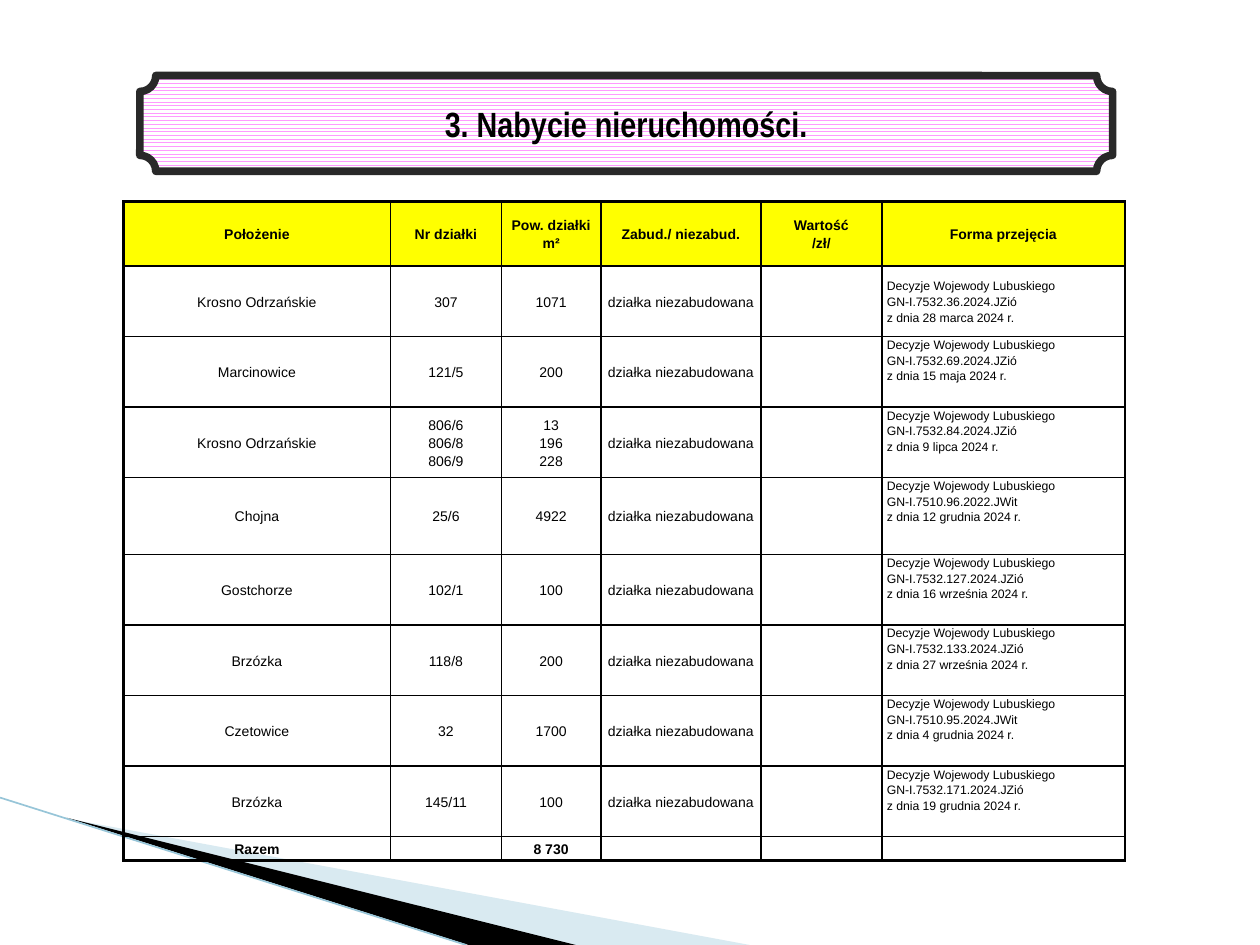
from lxml import etree
from pptx import Presentation
from pptx.dml.color import RGBColor
from pptx.enum.dml import MSO_PATTERN
from pptx.enum.shapes import MSO_CONNECTOR, MSO_SHAPE
from pptx.enum.text import MSO_ANCHOR, PP_ALIGN
from pptx.oxml.ns import qn
from pptx.util import Inches, Pt

PLAQUE, STRAIGHT = MSO_SHAPE.PLAQUE, MSO_CONNECTOR.STRAIGHT
ZIG_ZAG = MSO_PATTERN.ZIG_ZAG
LEFT, CENTER = PP_ALIGN.LEFT, PP_ALIGN.CENTER
TOP, MIDDLE = MSO_ANCHOR.TOP, MSO_ANCHOR.MIDDLE

# Content
TITLE = "3. Nabycie nieruchomości."
HEADERS = ["Położenie", "Nr działki", "Pow. działki m²", "Zabud./ niezabud.",
           "Wartość\n/zł/", "Forma przejęcia"]
BUILT = "działka niezabudowana"
ISSUER = "Decyzje Wojewody Lubuskiego"
PLOTS = [  # place, plot numbers, areas, case number, date
    ("Krosno Odrzańskie", "307", "1071", "GN-I.7532.36.2024.JZió", "28 marca 2024"),
    ("Marcinowice", "121/5", "200", "GN-I.7532.69.2024.JZió", "15 maja 2024"),
    ("Krosno Odrzańskie", "806/6\n806/8\n806/9", "13\n196\n228",
     "GN-I.7532.84.2024.JZió", "9 lipca 2024"),
    ("Chojna", "25/6", "4922", "GN-I.7510.96.2022.JWit", "12 grudnia 2024"),
    ("Gostchorze", "102/1", "100", "GN-I.7532.127.2024.JZió", "16 września 2024"),
    ("Brzózka", "118/8", "200", "GN-I.7532.133.2024.JZió", "27 września 2024"),
    ("Czetowice", "32", "1700", "GN-I.7510.95.2024.JWit", "4 grudnia 2024"),
    ("Brzózka", "145/11", "100", "GN-I.7532.171.2024.JZió", "19 grudnia 2024"),
]
TOTAL = ["Razem", "", "8 730", "", "", ""]

# Layout in inches
WIDTH, HEIGHT = 10, 7.5
COLUMNS = [2.12, 0.88, 0.79, 1.27, 0.96, 1.93]
HEADER_HEIGHT, PLOT_HEIGHT, TALL_HEIGHT, TOTAL_HEIGHT = 0.51, 0.56, 0.61, 0.19
TALL_PLACE = "Chojna"

THEME = {
    "black": "000000", "header": "FFFF00", "pattern": "FF99FF", "paper": "FFFFFF",
    "frame": "292929", "pale": "A0CBDC", "edge": "97C5D8",
    "font": "Arial", "title_font": "Arial Narrow",
    "title": 20, "body": 8, "small": 7,
    "inner": 1, "outer": 1.5, "bottom": 2.25,
}
SWOOSH = [  # points, colour, opacity in percent
    ([(0.55, 6.5), (5.95, HEIGHT), (4.56, HEIGHT)], "pale", 40),
    ([(0.53, 6.49), (4.57, HEIGHT), (3.72, HEIGHT)], "black", 100),
]


def color(name):
    return RGBColor.from_string(THEME[name])


def write(frame, text, size="body", font="font", bold=False, align=CENTER, spacing=1.15):
    for index, line in enumerate(text.split("\n")):
        paragraph = frame.paragraphs[0] if index == 0 else frame.add_paragraph()
        paragraph.alignment = align
        paragraph.line_spacing = spacing
        if not line:  # keeps an empty cell as low as its row
            etree.SubElement(paragraph._p, qn("a:endParaRPr"), sz=str(THEME[size] * 100))
            continue
        run = paragraph.add_run()
        run.text = line
        run.font.size = Pt(THEME[size])
        run.font.name = THEME[font]
        run.font.bold = bold
        run.font.color.rgb = color("black")


def add_borders(cell, widths):
    properties = cell._tc.get_or_add_tcPr()
    for side, width in zip("LRTB", widths):
        line = etree.SubElement(properties, qn(f"a:ln{side}"), w=str(Pt(width)))
        fill = etree.SubElement(line, qn("a:solidFill"))
        etree.SubElement(fill, qn("a:srgbClr"), val=THEME["black"])


def add_swoosh(slide):
    for points, fill, opacity in SWOOSH:
        corners = [(Inches(x), Inches(y)) for x, y in points]
        builder = slide.shapes.build_freeform(*corners[0])
        builder.add_line_segments(corners[1:])
        shape = builder.convert_to_shape()
        shape.shadow.inherit = False
        shape.line.fill.background()
        shape.fill.solid()
        shape.fill.fore_color.rgb = color(fill)
        if opacity < 100:
            tint = shape._element.spPr.find(f".//{qn('a:srgbClr')}")
            etree.SubElement(tint, qn("a:alpha"), val=str(opacity * 1000))
    edge = slide.shapes.add_connector(STRAIGHT, 0, Inches(6.33), Inches(3.7), Inches(HEIGHT))
    edge.line.color.rgb = color("edge")
    edge.line.width = Pt(0.95)
    etree.SubElement(edge._element.spPr, qn("a:effectLst"))


def add_title(slide):
    plaque = slide.shapes.add_shape(PLAQUE, Inches(1.11), Inches(0.6), Inches(7.72), Inches(0.76))
    plaque.shadow.inherit = False
    plaque.fill.patterned()
    plaque.fill.pattern = ZIG_ZAG
    plaque.fill.fore_color.rgb = color("pattern")
    plaque.fill.back_color.rgb = color("paper")
    plaque.line.color.rgb = color("frame")
    plaque.line.width = Pt(4.33)
    plaque.text_frame.vertical_anchor = MIDDLE
    write(plaque.text_frame, TITLE, size="title", font="title_font", bold=True, spacing=1)


def add_plot_table(slide):
    rows = [HEADERS]
    heights = [HEADER_HEIGHT]
    for place, numbers, areas, case, date in PLOTS:
        rows.append([place, numbers, areas, BUILT, "", f"{ISSUER}\n{case}\nz dnia {date} r."])
        heights.append(TALL_HEIGHT if place == TALL_PLACE else PLOT_HEIGHT)
    rows.append(TOTAL)
    heights.append(TOTAL_HEIGHT)

    last_row, last_column = len(rows) - 1, len(COLUMNS) - 1
    table = slide.shapes.add_table(len(rows), len(COLUMNS), Inches(0.98), Inches(1.6),
                                   Inches(sum(COLUMNS)), Inches(sum(heights))).table
    table.first_row = table.horz_banding = False
    for column, width in zip(table.columns, COLUMNS):
        column.width = Inches(width)
    for row, height in zip(table.rows, heights):
        row.height = Inches(height)

    inner, outer, bottom = THEME["inner"], THEME["outer"], THEME["bottom"]
    for r, texts in enumerate(rows):
        for c, text in enumerate(texts):
            cell = table.cell(r, c)
            decision = c == last_column and 0 < r < last_row
            cell.margin_left = cell.margin_right = Inches(0.04)
            cell.margin_top = cell.margin_bottom = 0
            cell.vertical_anchor = TOP if decision and r > 1 else MIDDLE
            add_borders(cell, (outer if c == 0 else inner,
                               outer if c == last_column else inner,
                               outer if r == 0 else inner,
                               bottom if r == last_row else inner))
            if r == 0:
                cell.fill.solid()
                cell.fill.fore_color.rgb = color("header")
            else:
                cell.fill.background()
            write(cell.text_frame, text, size="small" if decision else "body",
                  bold=r in (0, last_row), align=LEFT if decision else CENTER)


def main():
    presentation = Presentation()
    presentation.slide_width, presentation.slide_height = Inches(WIDTH), Inches(HEIGHT)
    slide = presentation.slides.add_slide(presentation.slide_layouts[6])
    add_swoosh(slide)
    add_title(slide)
    add_plot_table(slide)
    presentation.save("out.pptx")


if __name__ == "__main__":
    main()
